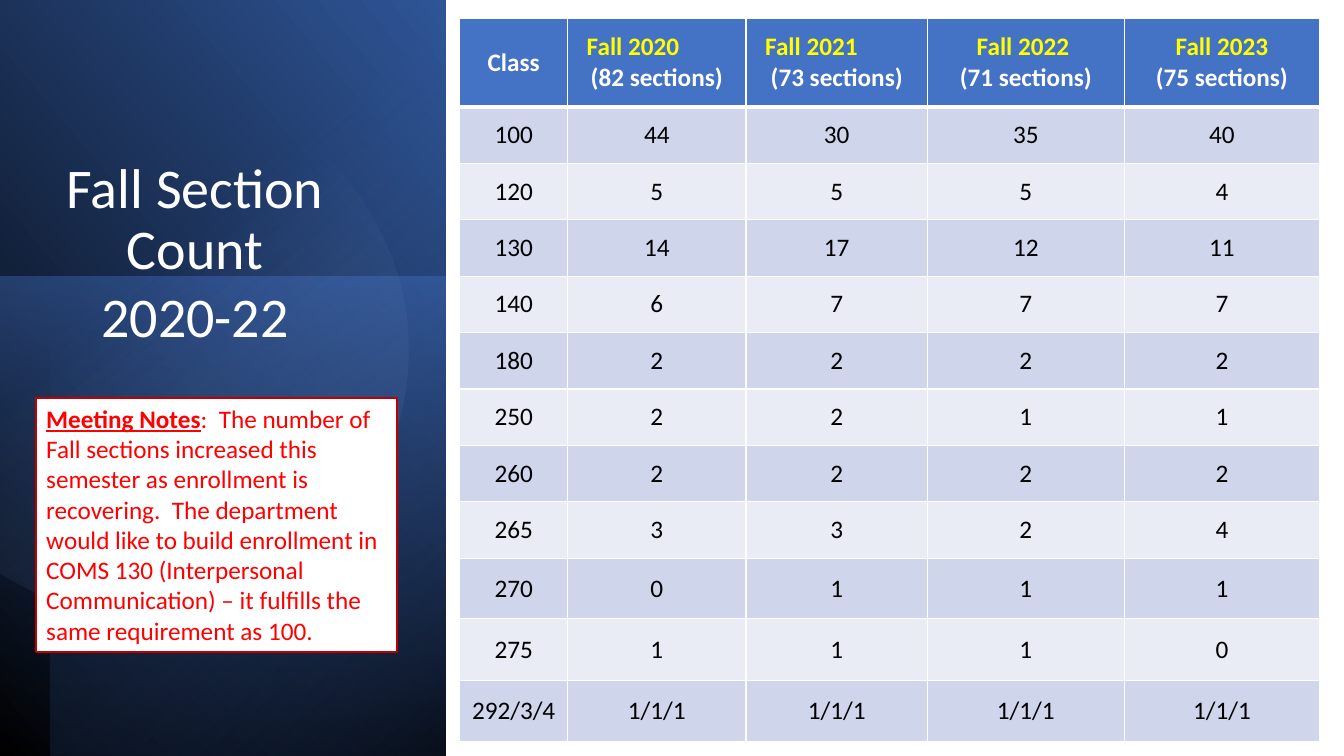
import pptx
import pptx.util
import pptx.dml.color
import pptx.enum.shapes
import pptx.enum.text
import pptx.oxml
import pptx.oxml.ns

RGB = pptx.dml.color.RGBColor
WHITE = RGB(0xFF, 0xFF, 0xFF)
BLACK = RGB(0x00, 0x00, 0x00)
RED = RGB(0xFF, 0x00, 0x00)
MAROON = RGB(0xC0, 0x00, 0x00)
YELLOW = RGB(0xFF, 0xFF, 0x00)
BLUE = RGB(0x44, 0x72, 0xC4)
NAVY = RGB(0x20, 0x38, 0x64)
DEEP = RGB(0x2F, 0x55, 0x97)
PALE = RGB(0x8F, 0xAA, 0xDC)
BANDS = [RGB(0xE9, 0xEB, 0xF5), RGB(0xCF, 0xD5, 0xEA)]
SPACE = pptx.oxml.ns.nsdecls("a")
ALIGN = pptx.enum.text.PP_ALIGN
ANCHOR = pptx.enum.text.MSO_ANCHOR
RECT = pptx.enum.shapes.MSO_SHAPE.RECTANGLE

deck = pptx.Presentation()
deck.slide_width = pptx.util.Inches(13.33)
deck.slide_height = pptx.util.Inches(7.5)
slide = deck.slides.add_slide(deck.slide_layouts[6])
shapes = slide.shapes

# The slide is a grid of 1333 columns by 750 rows of square cells.
cell = deck.slide_height // 750


def shade(shape, stops, angle):
    """Fill with a gradient of (position %, colour, opacity %) stops, without line or shadow."""
    shape.shadow.inherit = False
    shape.line.fill.background()
    shape.fill.solid()
    marks = "".join(
        f'<a:gs pos="{pos * 1000}"><a:srgbClr val="{color}">'
        f'<a:alpha val="{alpha * 1000}"/></a:srgbClr></a:gs>'
        for pos, color, alpha in stops)
    grad = pptx.oxml.parse_xml(
        f'<a:gradFill {SPACE} rotWithShape="1"><a:gsLst>{marks}</a:gsLst>'
        f'<a:lin ang="{round(angle * 60000)}" scaled="0"/></a:gradFill>')
    props = shape.element.spPr
    props.replace(props.find(pptx.oxml.ns.qn("a:solidFill")), grad)


def write(para, text, size, color, bold=False, under=False):
    run = para.add_run()
    run.text = text
    run.font.name = "Calibri"
    run.font.size = pptx.util.Pt(size)
    run.font.color.rgb = color
    run.font.bold = bold
    run.font.underline = under


# Left panel: three turned rectangles and a soft disc
panels = [
    ((-155, 155, 752, 442), 90, True, [(0, BLACK, 100), (100, DEEP, 100)], 310),
    ((-17, 291, 476, 442), 270, False, [(0, BLUE, 50), (100, NAVY, 0)], 190),
    ((-129, 179, 750, 392), 270, True, [(0, BLACK, 59), (69, BLUE, 0)], 220),
]
for box, turn, flip, stops, angle in panels:
    panel = shapes.add_shape(RECT, *[n * cell for n in box])
    panel.rotation = turn
    if flip:
        panel.element.spPr.xfrm.set("flipH", "1")
    shade(panel, stops, angle)

# Each outline step is a straight end point, or two handles and an end point.
top = 84
start = (143, top)
outline = [
    [(160, 84), (178, 86), (196, 89)],
    [(338, 119), (429, 258), (400, 400)],
    [(371, 542), (232, 634), (90, 605)],
    [(63, 599), (38, 590), (15, 577)],
    [(0, 568)],
    [(0, 126)],
    [(20, 115)],
    [(57, 95), (99, 84), start],
]
pen = shapes.build_freeform(start[0] * cell, start[1] * cell)
pen.add_line_segments([(x * cell, y * cell) for *_, (x, y) in outline], close=True)
disc = pen.convert_to_shape()
lines = list(disc.element.iter(pptx.oxml.ns.qn("a:lnTo")))
for line, bend in zip(lines, outline):
    if len(bend) == 3:
        marks = "".join(f'<a:pt x="{x * cell}" y="{(y - top) * cell}"/>' for x, y in bend)
        line.getparent().replace(line, pptx.oxml.parse_xml(
            f'<a:cubicBezTo {SPACE}>{marks}</a:cubicBezTo>'))
shade(disc, [(39, PALE, 0), (100, DEEP, 26)], 51.6)

# Title
title = shapes.add_textbox(36 * cell, 154 * cell, 315 * cell, 336 * cell).text_frame
title.word_wrap = True
for row, text in enumerate(["Fall Section Count", "2020-22"]):
    para = title.add_paragraph() if row else title.paragraphs[0]
    para.alignment = ALIGN.CENTER
    para.line_spacing = 0.9
    para.space_after = pptx.util.Pt(6)
    write(para, text, 40, WHITE)

# Section counts
heads = [("Class", ""), ("Fall 2020", "(82 sections)"), ("Fall 2021", "(73 sections)"),
         ("Fall 2022 ", "(71 sections)"), ("Fall 2023", "(75 sections)")]
counts = [
    ("100", "44", "30", "35", "40"),
    ("120", "5", "5", "5", "4"),
    ("130", "14", "17", "12", "11"),
    ("140", "6", "7", "7", "7"),
    ("180", "2", "2", "2", "2"),
    ("250", "2", "2", "1", "1"),
    ("260", "2", "2", "2", "2"),
    ("265", "3", "3", "2", "4"),
    ("270", "0", "1", "1", "1"),
    ("275", "1", "1", "1", "0"),
    ("292/3/4", "1/1/1", "1/1/1", "1/1/1", "1/1/1"),
]
widths = [107, 177, 180, 195, 194]
heights = [88] + [56] * 8 + [60, 61, 61]
table = shapes.add_table(len(heights), len(widths), 456 * cell, 18 * cell,
                         sum(widths) * cell, sum(heights) * cell).table
for col, width in zip(table.columns, widths):
    col.width = width * cell
for row, height in zip(table.rows, heights):
    row.height = height * cell

for r, line in enumerate([heads] + counts):
    for c, entry in enumerate(line):
        box = table.cell(r, c)
        box.vertical_anchor = ANCHOR.MIDDLE
        box.margin_left = box.margin_right = 8 * cell
        box.margin_top = box.margin_bottom = 4 * cell
        props = box._tc.get_or_add_tcPr()
        for side in "LRTB":
            thick = 3 if (r, side) in [(0, "B"), (1, "T")] else 1
            props.append(pptx.oxml.parse_xml(
                f'<a:ln{side} {SPACE} w="{thick * 12700}"><a:solidFill>'
                f'<a:srgbClr val="{WHITE}"/></a:solidFill></a:ln{side}>'))
        box.fill.solid()
        box.fill.fore_color.rgb = BANDS[r % 2] if r else BLUE
        para = box.text_frame.paragraphs[0]
        para.alignment = ALIGN.CENTER
        if r:
            write(para, entry, 18, BLACK)
            continue
        term, total = entry
        write(para, term, 18, YELLOW if total else WHITE, bold=True)
        if not total:
            continue
        if c == 3:
            para.add_line_break()
        else:
            if c < 3:
                para.alignment = ALIGN.LEFT
                para._p.get_or_add_pPr().set("marL", str(11 * cell))
            para = box.text_frame.add_paragraph()
            para.alignment = ALIGN.CENTER
        write(para, total, 18, WHITE, bold=True)

# Meeting notes
notes = shapes.add_shape(RECT, 36 * cell, 395 * cell, 358 * cell, 252 * cell)
notes.shadow.inherit = False
notes.fill.solid()
notes.fill.fore_color.rgb = WHITE
notes.line.color.rgb = MAROON
notes.line.width = pptx.util.Pt(1.25)
frame = notes.text_frame
frame.word_wrap = True
frame.auto_size = pptx.enum.text.MSO_AUTO_SIZE.SHAPE_TO_FIT_TEXT
frame.vertical_anchor = ANCHOR.TOP
para = frame.paragraphs[0]
para.alignment = ALIGN.LEFT
write(para, "Meeting Notes", 18, RED, bold=True, under=True)
write(para, ":  The number of Fall sections increased this semester as enrollment is "
      "recovering.  The department would like to build enrollment in COMS 130 "
      "(Interpersonal Communication) – it fulfills the same requirement as 100.", 18, RED)

deck.save("out.pptx")
